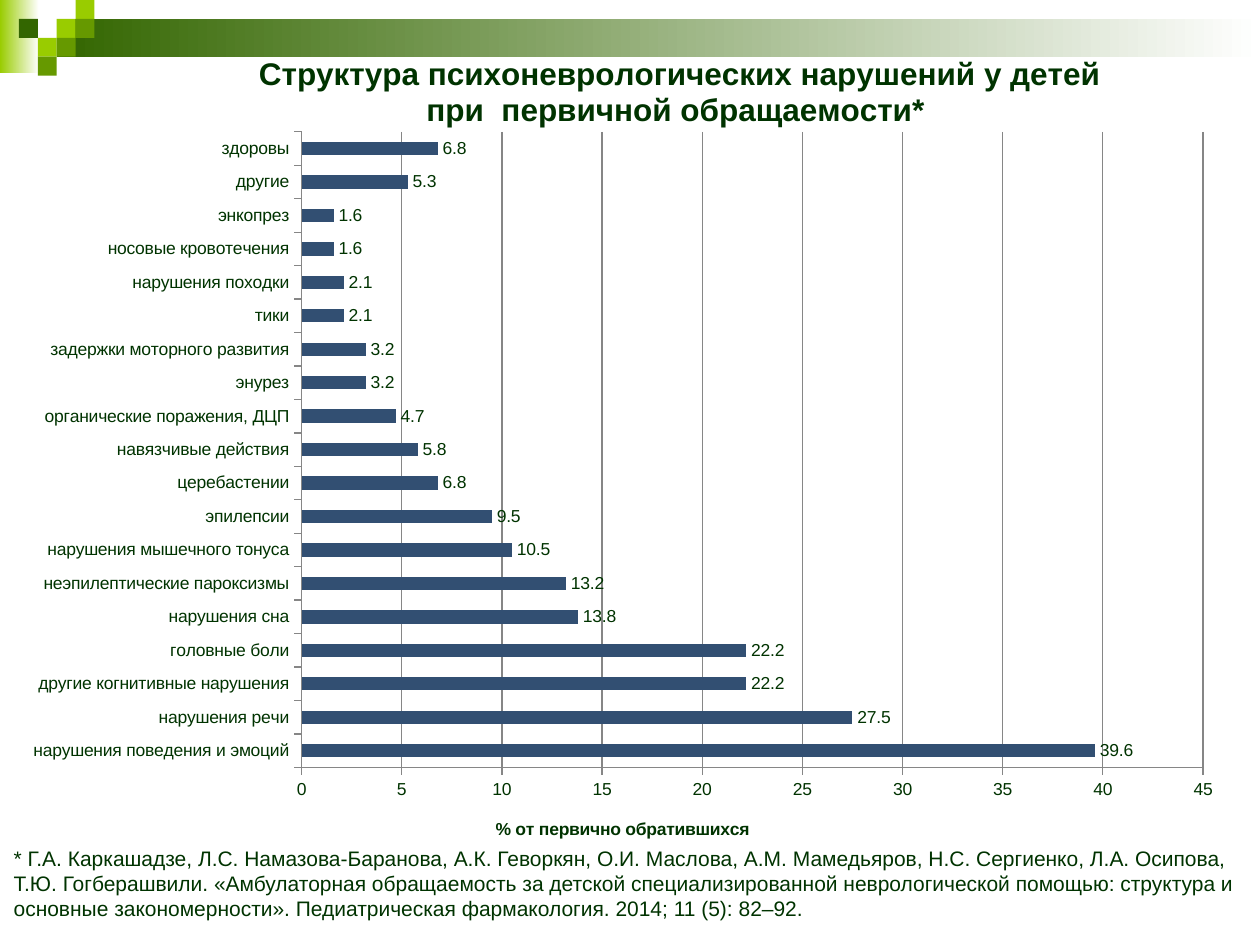
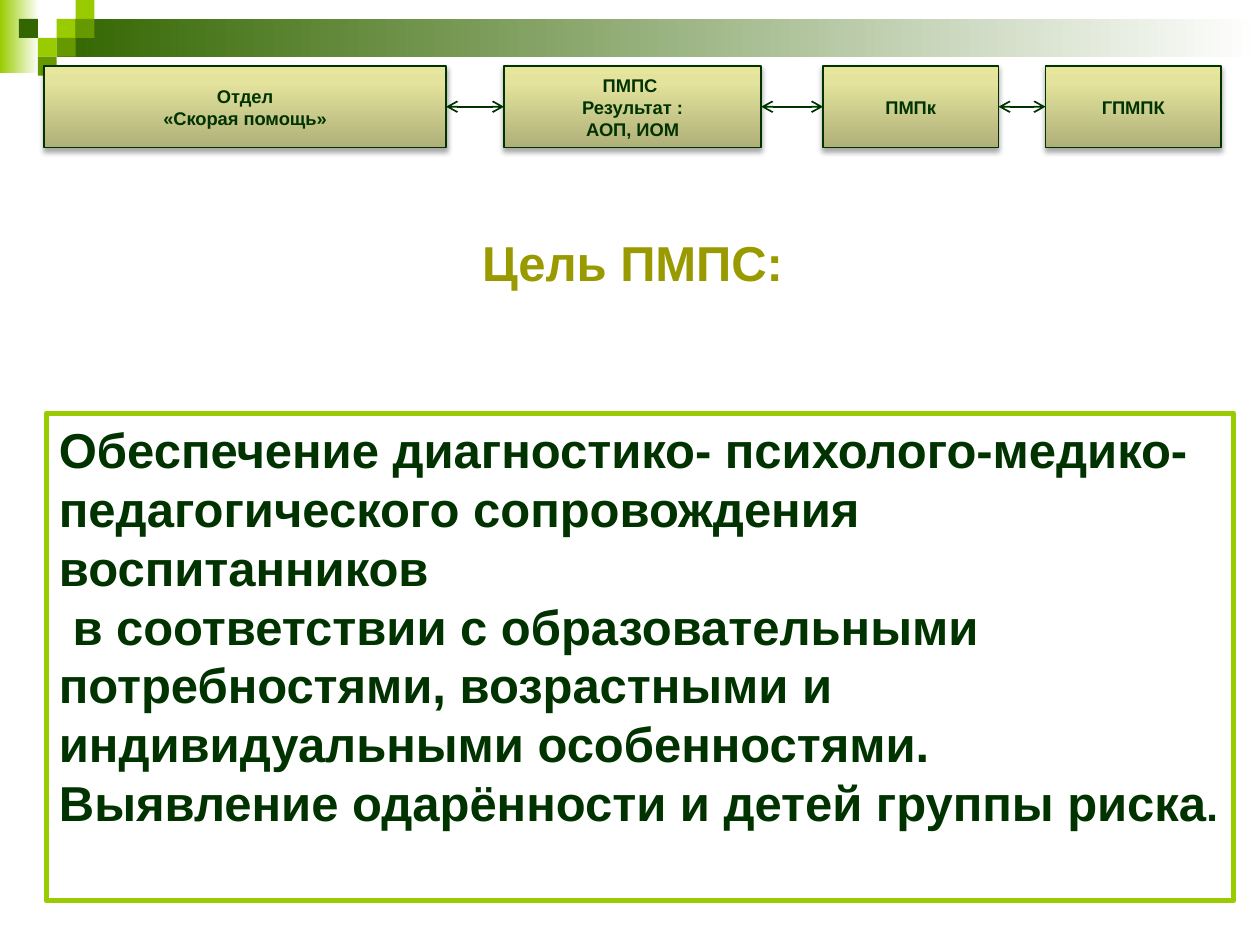
from itertools import pairwise

from pptx import Presentation
from pptx.chart.data import CategoryChartData
from pptx.dml.color import RGBColor
from pptx.enum.chart import XL_CHART_TYPE, XL_LABEL_POSITION, XL_TICK_MARK
from pptx.enum.shapes import MSO_CONNECTOR, MSO_SHAPE
from pptx.enum.text import MSO_ANCHOR, MSO_AUTO_SIZE, PP_ALIGN
from pptx.oxml import parse_xml
from pptx.oxml.ns import nsdecls, qn
from pptx.util import Pt

THEME = {
    "font": "Arial",
    "ink": "003300", "olive": "999900", "white": "FFFFFF",
    "lime": "99CC00", "leaf": "669900", "forest": "336600",
    "bar": "324F72", "grid": "868686",
    "step_stops": [(0, "AFAF79"), (80, "E3E39D"), (100, "E6E69C")],
    "chart_title": 18, "chart_text": 10, "source": 12,
    "step": 10.5, "heading": 28, "full_stop": 24,
}


def style(font, size, color="ink", bold=False):
    values = {"name": THEME["font"], "size": Pt(size), "bold": bold}
    for name, value in values.items():
        setattr(font, name, value)
    font.color.rgb = RGBColor.from_string(THEME[color])


def blend(shape, stops, angle):
    """Fill a shape with a linear gradient of (percent, colour) stops."""
    shape.fill.gradient()
    shape.fill.gradient_angle = angle
    stop_list = shape.element.spPr.find(".//" + qn("a:gsLst"))
    stop_list[:] = [
        parse_xml(f'<a:gs {nsdecls("a")} pos="{percent * 1000}"><a:srgbClr val="{color}"/></a:gs>')
        for percent, color in stops
    ]


deck = Presentation()
deck.slide_width, deck.slide_height = Pt(720), Pt(540)
title_only, blank = deck.slide_layouts[5], deck.slide_layouts[6]
chart_page = deck.slides.add_slide(blank)
goal_page = deck.slides.add_slide(title_only)

# Corner decoration, moved to the master so that both slides share it
CELL = 10.8
decor = []
for left, top, width, height, color in [
    (0, 0, 22.3, 41.8, "lime"),
    (3 * CELL, CELL, 720 - 3 * CELL, 2 * CELL, "forest"),
]:
    band = chart_page.shapes.add_shape(
        MSO_SHAPE.RECTANGLE, Pt(left), Pt(top), Pt(width), Pt(height))
    blend(band, [(0, THEME[color]), (100, THEME["white"])], 0)
    decor.append(band)
for column, row, color in [
    (3, 1, "lime"), (4, 0, "lime"), (4, 1, "leaf"), (2, 2, "lime"),
    (1, 1, "forest"), (3, 2, "leaf"), (2, 3, "leaf"),
]:
    square = chart_page.shapes.add_shape(
        MSO_SHAPE.RECTANGLE, Pt(column * CELL), Pt(row * CELL), Pt(CELL), Pt(CELL))
    square.fill.solid()
    square.fill.fore_color.rgb = RGBColor.from_string(THEME[color])
    decor.append(square)
master_tree = deck.slide_master.shapes.element
for position, shape in enumerate(decor, start=2):
    shape.shadow.inherit = False
    shape.line.fill.background()
    master_tree.insert(position, shape.element)

# Slide 1: bar chart of disorders
disorders = [
    ("нарушения поведения и эмоций", 39.6), ("нарушения речи", 27.5),
    ("другие когнитивные нарушения", 22.2), ("головные боли", 22.2),
    ("нарушения сна", 13.8), ("неэпилептические пароксизмы", 13.2),
    ("нарушения мышечного тонуса", 10.5), ("эпилепсии", 9.5),
    ("церебастении", 6.8), ("навязчивые действия", 5.8),
    ("органические поражения, ДЦП", 4.7), ("энурез", 3.2),
    ("задержки моторного развития", 3.2), ("тики", 2.1),
    ("нарушения походки", 2.1), ("носовые кровотечения", 1.6),
    ("энкопрез", 1.6), ("другие", 5.3), ("здоровы", 6.8),
]
data = CategoryChartData()
data.categories = [name for name, share in disorders]
data.add_series("Series 1", [share for name, share in disorders])
chart = chart_page.shapes.add_chart(
    XL_CHART_TYPE.BAR_CLUSTERED, Pt(17.3), Pt(26), Pt(686), Pt(456.5), data).chart
style(chart.font, THEME["chart_text"])
chart.has_legend = False

plot = chart.plots[0]
plot.gap_width = 150
plot.vary_by_categories = False
bars = plot.series[0].format.fill
bars.solid()
bars.fore_color.rgb = RGBColor.from_string(THEME["bar"])
plot.has_data_labels = True
labels = plot.data_labels
for name, value in {
    "show_value": True, "position": XL_LABEL_POSITION.OUTSIDE_END,
    "number_format": "General", "number_format_is_linked": False,
}.items():
    setattr(labels, name, value)
style(labels.font, THEME["chart_text"])

share_axis = chart.value_axis
for name, value in {
    "minimum_scale": 0, "maximum_scale": 45, "major_unit": 5, "has_major_gridlines": True,
}.items():
    setattr(share_axis, name, value)
for axis in (chart.category_axis, share_axis):
    axis.major_tick_mark = XL_TICK_MARK.OUTSIDE
    axis.tick_labels.number_format = "General"
    axis.tick_labels.number_format_is_linked = False
    style(axis.tick_labels.font, THEME["chart_text"])
for line in (chart.category_axis.format.line, share_axis.format.line,
             share_axis.major_gridlines.format.line):
    line.width = Pt(0.75)
    line.color.rgb = RGBColor.from_string(THEME["grid"])

for title, text, size in [
    (chart.chart_title,
     " Структура психоневрологических нарушений у детей \nпри  первичной обращаемости* ",
     THEME["chart_title"]),
    (share_axis.axis_title, "% от первично обратившихся", THEME["chart_text"]),
]:
    title.text_frame.text = text
    for para in title.text_frame.paragraphs:
        style(para.font, size, bold=True)
        for span in para.runs:
            style(span.font, size, bold=True)

# Fractions of the chart area; the plot rectangle excludes the axis labels
for element, index, places in [
    (chart.element.find(".//" + qn("c:plotArea")), 0,
     {"x": 0.226, "y": 0.109, "w": 0.751, "h": 0.802}),
    (chart.chart_title.element, 1, {"x": 0.18, "y": 0.007}),
    (share_axis.axis_title.element, 1, {"x": 0.385, "y": 0.97}),
]:
    target = '<c:layoutTarget val="inner"/>' if "w" in places else ""
    modes = "".join(f'<c:{key}Mode val="edge"/>' for key in "xy")
    sizes = "".join(f'<c:{key} val="{value}"/>' for key, value in places.items())
    for old in element.findall(qn("c:layout")):
        element.remove(old)
    element.insert(index, parse_xml(
        f'<c:layout {nsdecls("c")}><c:manualLayout>{target}{modes}{sizes}'
        "</c:manualLayout></c:layout>"))

source = chart_page.shapes.add_textbox(Pt(0.7), Pt(479.5), Pt(719.3), Pt(51))
source.text_frame.word_wrap = True
span = source.text_frame.paragraphs[0].add_run()
span.text = (
    "* Г.А. Каркашадзе, Л.С. Намазова-Баранова, А.К. Геворкян, О.И. Маслова, "
    "А.М. Мамедьяров, Н.С. Сергиенко, Л.А. Осипова, Т.Ю. Гогберашвили. "
    "«Амбулаторная обращаемость за детской специализированной неврологической помощью: "
    "структура и основные закономерности». Педиатрическая фармакология. "
    "2014; 11 (5): 82–92.")
style(span.font, THEME["source"])

# Slide 2: heading, chain of services and the goal
heading = goal_page.shapes.title
for name, value in {
    "left": Pt(25.2), "top": Pt(129), "width": Pt(672.5), "height": Pt(281.5),
}.items():
    setattr(heading, name, value)
heading.text_frame.text = "Цель ПМПС:"
heading.text_frame.vertical_anchor = MSO_ANCHOR.TOP
heading.text_frame.auto_size = MSO_AUTO_SIZE.NONE
para = heading.text_frame.paragraphs[0]
para.alignment = PP_ALIGN.CENTER
para.space_before = Pt(5.6)
style(para.runs[0].font, THEME["heading"], "olive", bold=True)

steps = []
for left, width, lines in [
    (25.2, 229.7, ["Отдел", "«Скорая помощь»"]),
    (288, 147, ["ПМПС ", "Результат :", "АОП, ИОМ"]),
    (470.3, 100.3, ["ПМПк"]),
    (597.5, 100.3, ["ГПМПК"]),
]:
    step = goal_page.shapes.add_shape(
        MSO_SHAPE.RECTANGLE, Pt(left), Pt(37.6), Pt(width), Pt(46.8))
    blend(step, THEME["step_stops"], 90)
    step.line.width = Pt(1)
    step.line.color.rgb = RGBColor.from_string(THEME["ink"])
    step.shadow.inherit = False
    step.element.spPr.find(qn("a:effectLst")).append(parse_xml(
        f'<a:outerShdw {nsdecls("a")} blurRad="{Pt(3.1)}" dist="{Pt(1.8)}" dir="5400000" '
        'rotWithShape="0"><a:srgbClr val="000000"><a:alpha val="35000"/></a:srgbClr>'
        "</a:outerShdw>"))
    step.text_frame.vertical_anchor = MSO_ANCHOR.MIDDLE
    step.text_frame.text = "\n".join(lines)
    for para in step.text_frame.paragraphs:
        para.alignment = PP_ALIGN.CENTER
        style(para.runs[0].font, THEME["step"], bold=True)
    steps.append(step)

for before, after in pairwise(steps):
    arrow = goal_page.shapes.add_connector(MSO_CONNECTOR.STRAIGHT, 0, 0, 0, 0)
    arrow.begin_connect(before, 3)
    arrow.end_connect(after, 1)
    arrow.line.width = Pt(1)
    arrow.line.color.rgb = RGBColor.from_string(THEME["ink"])
    for end in ("headEnd", "tailEnd"):
        arrow.element.spPr.find(qn("a:ln")).append(
            parse_xml(f'<a:{end} {nsdecls("a")} type="arrow"/>'))
    arrow.element.spPr.append(parse_xml(f'<a:effectLst {nsdecls("a")}/>'))

goal = goal_page.shapes.add_shape(
    MSO_SHAPE.RECTANGLE, Pt(26.6), Pt(236.2), Pt(678.2), Pt(278.6))
goal.shadow.inherit = False
goal.fill.solid()
goal.fill.fore_color.rgb = RGBColor.from_string(THEME["white"])
goal.line.width = Pt(3)
goal.line.color.rgb = RGBColor.from_string(THEME["lime"])
frame = goal.text_frame
frame.word_wrap = True
frame.vertical_anchor = MSO_ANCHOR.TOP
frame.text = (
    "Обеспечение диагностико- психолого-медико-педагогического сопровождения воспитанников\n"
    " в соответствии с образовательными потребностями, возрастными и индивидуальными "
    "особенностями. Выявление одарённости и детей группы риска")
for para in frame.paragraphs:
    para.alignment = PP_ALIGN.LEFT
    style(para.runs[0].font, THEME["heading"], bold=True)
full_stop = frame.paragraphs[-1].add_run()
full_stop.text = "."
style(full_stop.font, THEME["full_stop"], bold=True)

deck.save("out.pptx")
